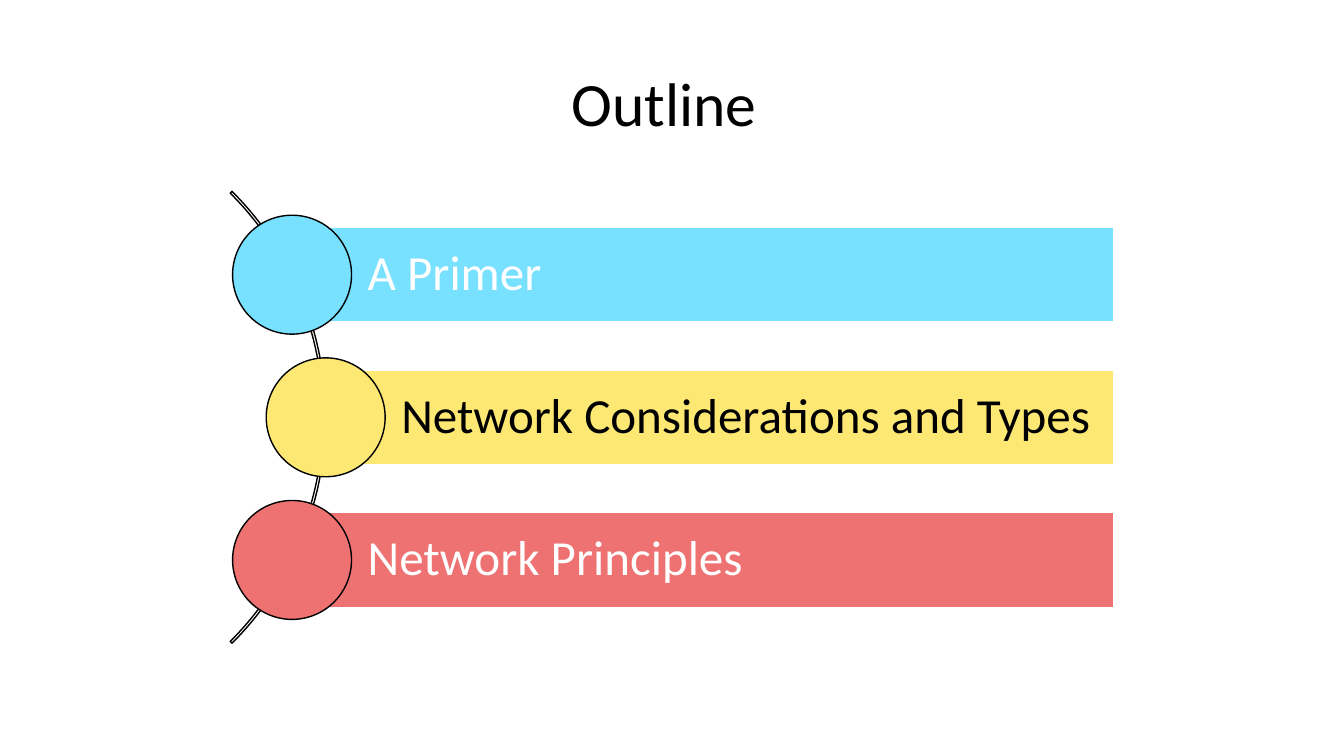
from math import sqrt

from pptx import Presentation, util as u
from pptx.dml.color import RGBColor
from pptx.enum import shapes, text

BLACK = RGBColor(0x00, 0x00, 0x00)
WHITE = RGBColor(0xFF, 0xFF, 0xFF)
BLUE = RGBColor(0x77, 0xE1, 0xFF)
YELLOW = RGBColor(0xFC, 0xE8, 0x73)
RED = RGBColor(0xEF, 0x72, 0x73)

TITLE = "Outline"
TOPICS = [
    ("A Primer", BLUE, WHITE),
    ("Network Considerations and Types", YELLOW, BLACK),
    ("Network Principles", RED, WHITE),
]

SLIDE_W, SLIDE_H = 13.33, 7.5
ARC_X, ARC_Y, ARC_R = 0.06, 4.14, 3.17   # centre and radius of the arc
ROW_STEP = 1.415
BAR_RIGHT, BAR_H = 11.05, 0.94
DOT = 1.18


def add_shape(slide, kind, box, fill, line):
    sp = slide.shapes.add_shape(kind, *map(u.Inches, box))
    sp.shadow.inherit = False
    if fill is None:
        sp.fill.background()
    else:
        sp.fill.solid()
        sp.fill.fore_color.rgb = fill
    sp.line.color.rgb = line
    sp.line.width = u.Pt(1)
    return sp


def write(sp, words, size, color, align, margins):
    tf = sp.text_frame
    frame = {"word_wrap": True, "auto_size": text.MSO_AUTO_SIZE.NONE,
             "vertical_anchor": text.MSO_ANCHOR.MIDDLE}
    frame.update({f"margin_{side}": u.Inches(m) for side, m in margins.items()})
    for name, value in frame.items():
        setattr(tf, name, value)
    p = tf.paragraphs[0]
    p.alignment, p.line_spacing = align, 0.9
    r = p.add_run()
    r.text = words
    for name, value in {"name": "Calibri", "size": u.Pt(size)}.items():
        setattr(r.font, name, value)
    r.font.color.rgb = color


def add_topic(slide, row, words, fill, color):
    """Place a bar and its dot where the row meets the arc."""
    drop = (row - (len(TOPICS) - 1) / 2) * ROW_STEP
    x, y = ARC_X + sqrt(ARC_R ** 2 - drop ** 2), ARC_Y + drop
    bar = add_shape(slide, shapes.MSO_SHAPE.RECTANGLE,
                    (x, y - BAR_H / 2, BAR_RIGHT - x, BAR_H), fill, WHITE)
    write(bar, words, 35, color, text.PP_ALIGN.LEFT,
          {"left": 0.75, "top": 0.1, "right": 0.1, "bottom": 0.1})
    add_shape(slide, shapes.MSO_SHAPE.OVAL,
              (x - DOT / 2, y - DOT / 2, DOT, DOT), fill, BLACK)


def main():
    prs = Presentation()
    prs.slide_width, prs.slide_height = u.Inches(SLIDE_W), u.Inches(SLIDE_H)
    slide = prs.slides.add_slide(prs.slide_layouts[5])

    title = slide.shapes.title
    box = {"left": 0.75, "top": 0.33, "width": 11.67, "height": 1.45}
    for name, value in box.items():
        setattr(title, name, u.Inches(value))
    write(title, TITLE, 44, BLACK, text.PP_ALIGN.CENTER, {})

    arc = add_shape(slide, shapes.MSO_SHAPE.BLOCK_ARC,
                    (ARC_X - ARC_R, ARC_Y - ARC_R, 2 * ARC_R, 2 * ARC_R),
                    None, BLACK)
    for i, value in enumerate((189, 27, 0.004)):
        arc.adjustments[i] = value

    for row, topic in enumerate(TOPICS):
        add_topic(slide, row, *topic)
    prs.save("out.pptx")


if __name__ == "__main__":
    main()
